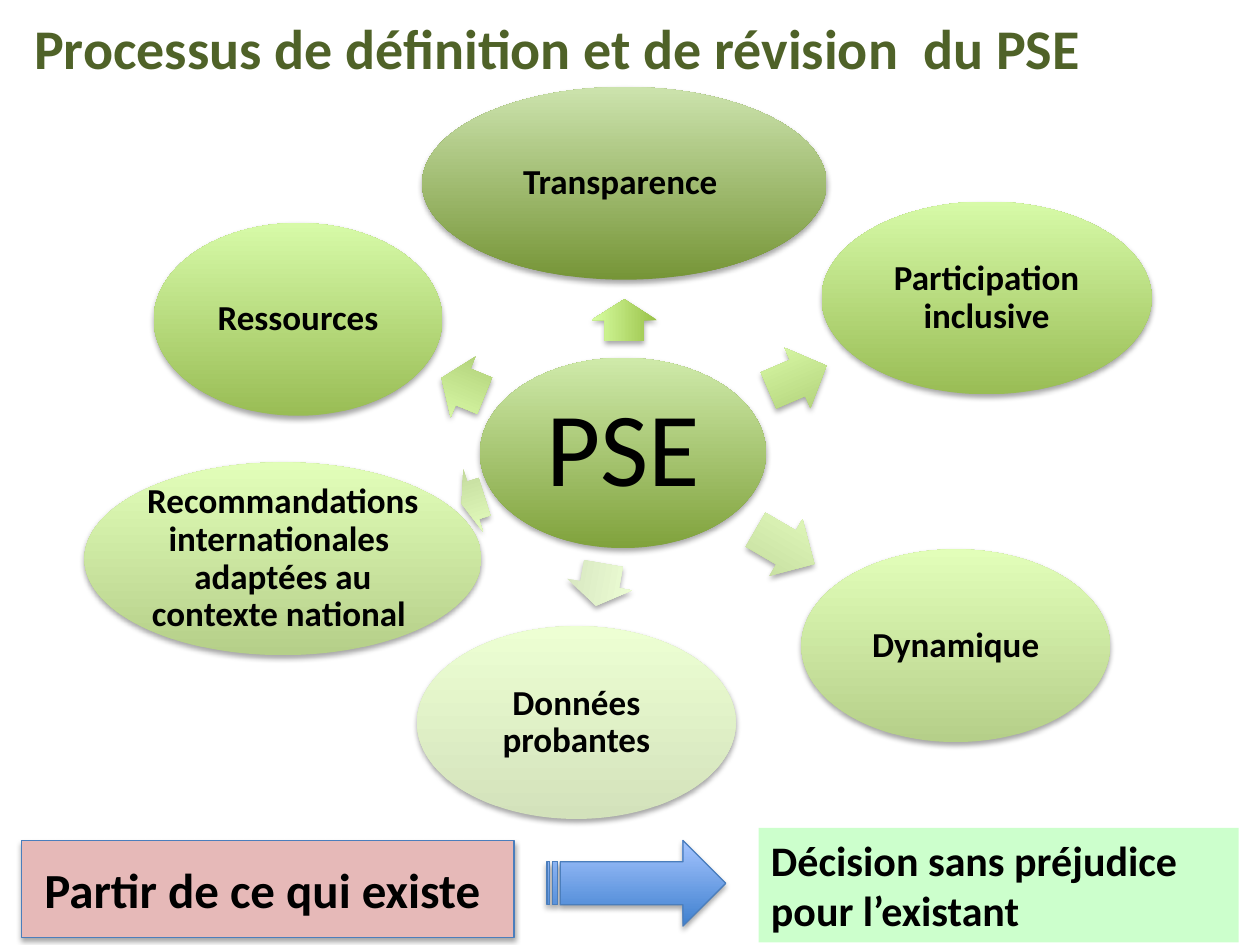
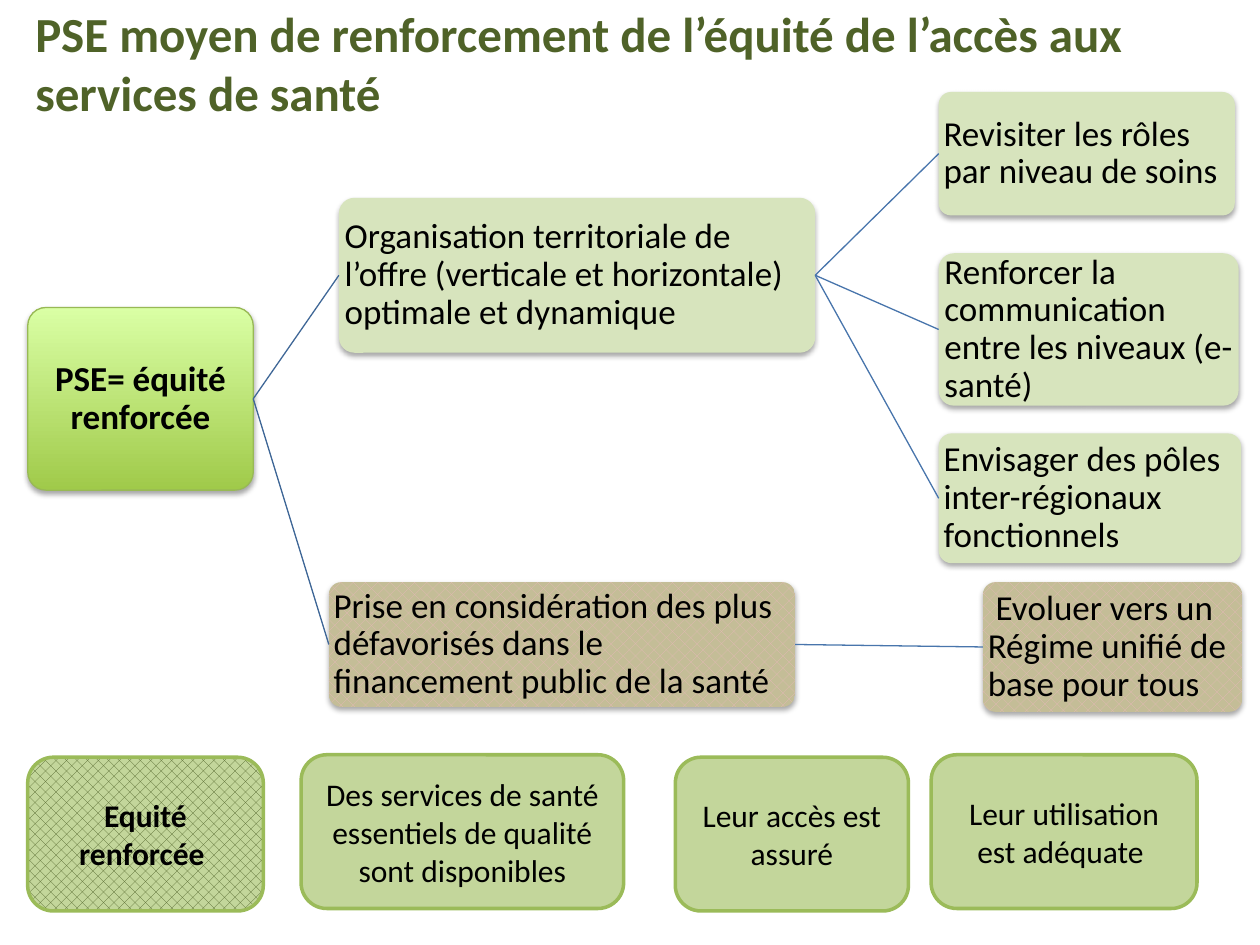
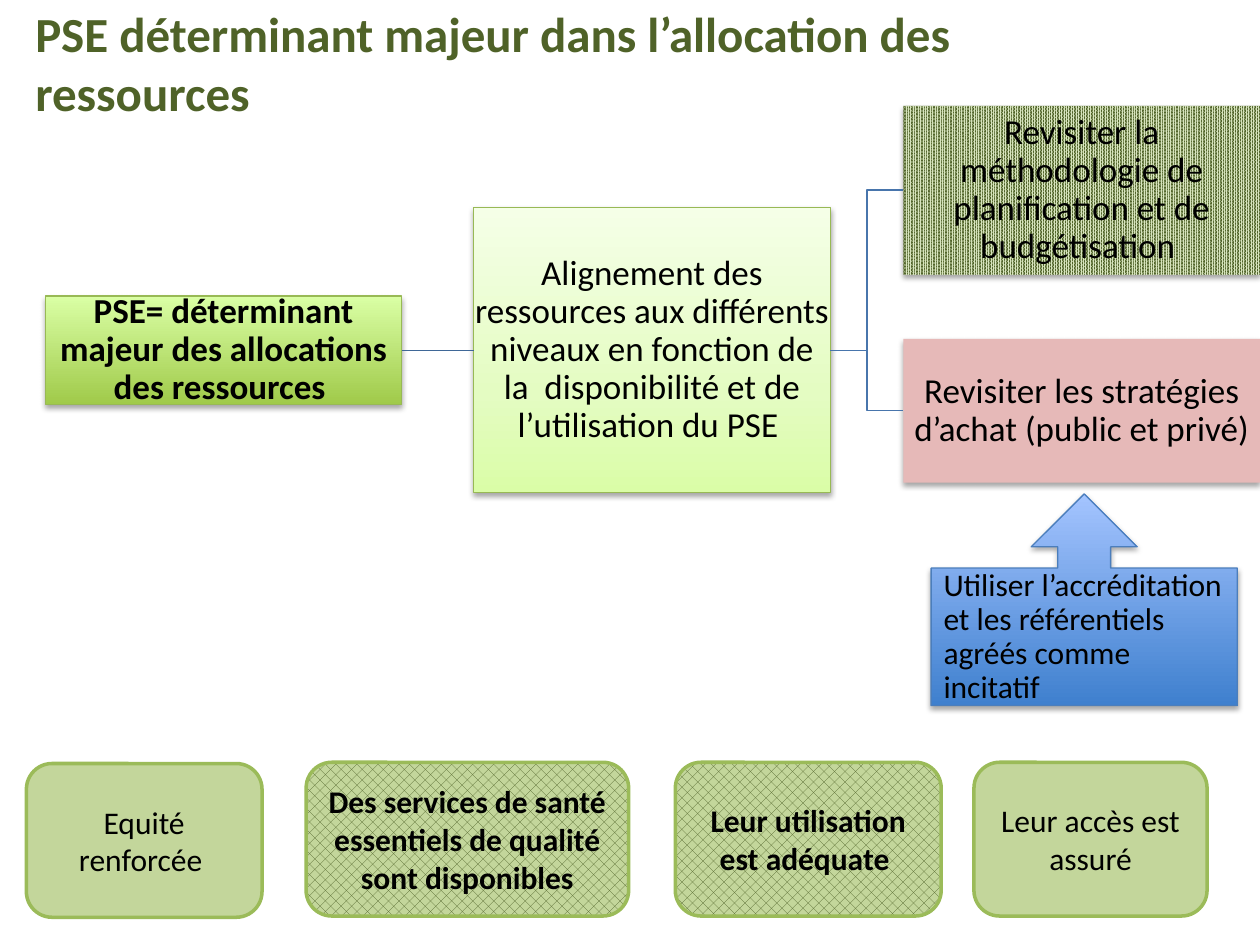
import copy
from dataclasses import dataclass, replace
from typing import Optional, Union

import pptx
import pptx.dml.color
import pptx.enum.dml
import pptx.enum.shapes
import pptx.enum.text
import pptx.oxml
import pptx.oxml.ns
import pptx.util
from lxml import etree

PX = 9144  # 100 px to the inch
FONT = "Calibri"
DARK_GREEN, PALE_GREEN, SOFT_GREEN, LEAF = "4F6228", "D7E4BD", "C3D69B", "9BBB59"
PINK, MINT, SAND, BLACK = "E6B9B8", "CCFFCC", "C4BD97", "000000"
BLUE_EDGE, GREEN_EDGE = "4B7EBC", "98B955"
TRUNK_LINE, BRANCH_LINE = "3F6797", "4875AC"

Kind = pptx.enum.shapes.MSO_SHAPE
Link = pptx.enum.shapes.MSO_CONNECTOR
Pattern = pptx.enum.dml.MSO_PATTERN
Align = pptx.enum.text.PP_ALIGN
Anchor = pptx.enum.text.MSO_ANCHOR


@dataclass(frozen=True)
class Gradient:
    """Colours from bottom to top, with an optional one at 35 %."""
    bottom: str
    top: str
    middle: Optional[str] = None


@dataclass(frozen=True)
class Hatch:
    pattern: Pattern
    front: str
    back: str


@dataclass(frozen=True)
class Look:
    fill: Union[str, Gradient, Hatch]
    line: Optional[str] = None
    line_width: float = 0.75
    shadow: bool = True


@dataclass(frozen=True)
class Style:
    size: int = 20
    bold: bool = False
    align: Align = Align.CENTER
    spacing: Optional[float] = 0.9
    inset: Optional[int] = 1
    anchor: Anchor = Anchor.MIDDLE


@dataclass(frozen=True)
class Frame:
    left: int
    top: int
    width: int
    height: int


@dataclass(frozen=True)
class Spoke:
    """A quality around the hub and the arrow that leads to it."""
    label: str
    oval: Frame
    oval_fill: Gradient
    arrow: Frame
    angle: float
    arrow_fill: Gradient


@dataclass(frozen=True)
class Criterion:
    label: str
    width: int


BLUE = Look(Gradient("3F80CE", "A4C4FF"), BLUE_EDGE)
ROOT = Look(Gradient("A0CA4A", "DAFFA5"), GREEN_EDGE)
OFFER = Look(PALE_GREEN)
FUNDING = Look(Hatch(Pattern.from_xml("pct30"), PINK, SAND))
PLAIN_CRITERION = Look(SOFT_GREEN, LEAF, 2, shadow=False)
KEY_CRITERION = replace(PLAIN_CRITERION,
                        fill=Hatch(Pattern.from_xml("pct40"), DARK_GREEN, SOFT_GREEN))

NODE = Style()
BOLD_NODE = Style(bold=True)
LEFT_NODE = Style(align=Align.LEFT)
BANNER = Style(28, True, spacing=None, inset=None)

EQUITY = Criterion("Equité renforcée ", 187)
SERVICES = Criterion("Des services de santé essentiels de qualité sont disponibles", 256)
USE = Criterion("Leur utilisation est adéquate ", 211)
ACCESS = Criterion("Leur accès est assuré", 185)

MEDIUM_OVAL, MEDIUM_ARROW = Gradient("99BD55", "D7FAA8"), Gradient("ABCB71", "DFFFAF")
LIGHT_OVAL, LIGHT_ARROW = Gradient("B5CF89", "E2FEB9"), Gradient("C0D799", "E6FFC1")

SPOKES = [
    Spoke("Transparence ", Frame(335, 69, 321, 153), Gradient("769537", "CCE3AD"),
          Frame(479, 228, 33, 52), 270, Gradient("99C147", "D8FEA2")),
    Spoke("Participation inclusive", Frame(652, 160, 262, 153), MEDIUM_OVAL,
          Frame(608, 274, 50, 52), 336.9, MEDIUM_ARROW),
    Spoke("Dynamique", Frame(636, 436, 245, 153), LIGHT_OVAL,
          Frame(596, 408, 54, 52), 30.2, LIGHT_ARROW),
    Spoke("Données probantes", Frame(331, 497, 253, 153), Gradient("D3E2BB", "EDFFD3"),
          Frame(459, 438, 34, 52), 100.1, Gradient("D6E5C0", "EEFFD5")),
    Spoke("Recommandations internationales  adaptées au contexte national ",
          Frame(67, 367, 315, 153), LIGHT_OVAL,
          Frame(366, 371, 19, 52), 162.6, LIGHT_ARROW),
    Spoke("Ressources", Frame(122, 177, 229, 153), MEDIUM_OVAL,
          Frame(349, 281, 37, 52), 202.3, MEDIUM_ARROW),
]


def rgb(value: str) -> pptx.dml.color.RGBColor:
    return pptx.dml.color.RGBColor.from_string(value)


def px(value: int) -> pptx.util.Emu:
    return pptx.util.Emu(value * PX)


def place(frame: Frame) -> tuple:
    return px(frame.left), px(frame.top), px(frame.width), px(frame.height)


def paint(shape, fill) -> None:
    if isinstance(fill, Gradient):
        shape.fill.gradient()
        shape.fill.gradient_angle = 90
        first, last = shape.fill.gradient_stops
        first.color.rgb, last.color.rgb = rgb(fill.bottom), rgb(fill.top)
        first.position, last.position = 0, 1
        if fill.middle:
            stop_list = shape._element.spPr.find(".//" + pptx.oxml.ns.qn("a:gsLst"))
            stop_list.insert(1, copy.deepcopy(stop_list[0]))
            middle = shape.fill.gradient_stops[1]
            middle.color.rgb, middle.position = rgb(fill.middle), 0.35
    elif isinstance(fill, Hatch):
        shape.fill.patterned()
        shape.fill.pattern = fill.pattern
        shape.fill.fore_color.rgb = rgb(fill.front)
        shape.fill.back_color.rgb = rgb(fill.back)
    else:
        shape.fill.solid()
        shape.fill.fore_color.rgb = rgb(fill)


def cast_shadow(shape) -> None:
    effects = shape._element.spPr.find(pptx.oxml.ns.qn("a:effectLst"))
    effects.append(pptx.oxml.parse_xml(
        f'<a:outerShdw {pptx.oxml.ns.nsdecls("a")} blurRad="40000" dist="23000"'
        ' dir="5400000" rotWithShape="0"><a:srgbClr val="000000">'
        '<a:alpha val="35000"/></a:srgbClr></a:outerShdw>'))


def write(shape, text: str, style: Style, color: str = BLACK) -> None:
    box = shape.text_frame
    box.word_wrap = True
    box.auto_size = pptx.enum.text.MSO_AUTO_SIZE.NONE
    box.vertical_anchor = style.anchor
    if style.inset is not None:
        box.margin_left = box.margin_right = px(style.inset)
        box.margin_top = box.margin_bottom = px(style.inset)
    box.text = text
    para = box.paragraphs[0]
    para.alignment = style.align
    if style.spacing:
        para.line_spacing = style.spacing
    para.font.name, para.font.size = FONT, pptx.util.Pt(style.size)
    para.font.bold, para.font.color.rgb = style.bold, rgb(color)


def add_shape(page, kind: Kind, frame: Frame, look: Look, text: str = "",
              style: Style = NODE, adjustments: tuple = ()):
    shape = page.shapes.add_shape(kind, *place(frame))
    for index, value in enumerate(adjustments):
        shape.adjustments[index] = value
    shape.shadow.inherit = False
    if look.shadow:
        cast_shadow(shape)
    paint(shape, look.fill)
    if look.line:
        shape.line.color.rgb = rgb(look.line)
        shape.line.width = pptx.util.Pt(look.line_width)
    else:
        shape.line.fill.background()
    if text:
        write(shape, text, style)
    return shape


def join(page, parent, child, color: str, kind: Link = Link.STRAIGHT) -> None:
    """Link the right side of parent to the left side of child."""
    line = page.shapes.add_connector(kind, 0, 0, 0, 0)
    line.begin_connect(parent, 3)
    line.end_connect(child, 1)
    line.line.color.rgb = rgb(color)
    line.line.width = pptx.util.Pt(0.75)
    etree.SubElement(line._element.spPr, pptx.oxml.ns.qn("a:effectLst"))


def add_page(deck, title: str, size: int = 28, left: int = 18, top: int = -13):
    page = deck.slides.add_slide(deck.slide_layouts[5])
    heading = page.shapes.title
    heading.left, heading.top, heading.width, heading.height = place(
        Frame(left, top, 900, 125))
    write(heading, title, Style(size, True, Align.LEFT, None, None), DARK_GREEN)
    return page


def add_criterion(page, criterion: Criterion, left: int, top: int, key: bool = False) -> None:
    add_shape(page, Kind.ROUNDED_RECTANGLE, Frame(left, top, criterion.width, 122),
              KEY_CRITERION if key else PLAIN_CRITERION, criterion.label,
              Style(18, key, spacing=None, inset=None))


def build_process(deck) -> None:
    page = add_page(deck, "Processus de définition et de révision  du PSE", 32, 17, -25)
    add_shape(page, Kind.OVAL, Frame(381, 284, 227, 151),
              Look(Gradient("80A23C", "CFEAAA")), "PSE", Style(60, inset=8))
    for spoke in SPOKES:
        arrow = add_shape(page, Kind.RIGHT_ARROW, spoke.arrow, Look(spoke.arrow_fill),
                          adjustments=(0.6, 0.5))
        arrow.rotation = spoke.angle
        add_shape(page, Kind.OVAL, spoke.oval, Look(spoke.oval_fill), spoke.label,
                  Style(bold=True, inset=3))
    add_shape(page, Kind.RECTANGLE, Frame(17, 667, 391, 77), Look(PINK, BLUE_EDGE),
              "Partir de ce qui existe ", BANNER)
    add_shape(page, Kind.RECTANGLE, Frame(602, 657, 381, 91), Look(MINT, shadow=False),
              "Décision sans préjudice pour l’existant",
              replace(BANNER, size=24, align=Align.LEFT, anchor=Anchor.TOP))
    add_shape(page, Kind.STRIPED_RIGHT_ARROW, Frame(434, 667, 142, 68), BLUE)


def build_equity(deck) -> None:
    page = add_page(
        deck, "PSE moyen de renforcement de l’équité de l’accès aux services de santé")

    def node(text: str, frame: Frame, look: Look, style: Style = LEFT_NODE):
        return add_shape(page, Kind.ROUNDED_RECTANGLE, frame, look, text, style, (0.1,))

    root = node("PSE= équité renforcée", Frame(22, 244, 179, 145), ROOT, BOLD_NODE)
    offer = node("Organisation territoriale de l’offre (verticale et horizontale) "
                 "optimale et dynamique", Frame(269, 157, 378, 123), OFFER)
    funding = node("Prise en considération des plus défavorisés dans le financement "
                   "public de la santé", Frame(261, 462, 370, 99), FUNDING)
    for branch in (offer, funding):
        join(page, root, branch, TRUNK_LINE)
    for parent, look, text, frame in [
        (offer, OFFER, "Revisiter les rôles par niveau de soins",
         Frame(745, 73, 235, 98)),
        (offer, OFFER, "Renforcer la communication entre les niveaux (e- santé)",
         Frame(745, 201, 238, 121)),
        (offer, OFFER, "Envisager des pôles  inter-régionaux fonctionnels",
         Frame(745, 344, 240, 103)),
        (funding, FUNDING, " Evoluer vers un Régime unifié de base pour tous",
         Frame(780, 462, 206, 103)),
    ]:
        join(page, parent, node(text, frame, look), BRANCH_LINE)

    add_criterion(page, EQUITY, 22, 601, key=True)
    add_criterion(page, SERVICES, 239, 599)
    add_criterion(page, ACCESS, 536, 601)
    add_criterion(page, USE, 739, 599)


def build_allocation(deck) -> None:
    page = add_page(deck, "PSE déterminant majeur dans l’allocation des ressources")

    def node(text: str, left: int, top: int, height: int, look: Look, style: Style = NODE):
        return add_shape(page, Kind.RECTANGLE, Frame(left, top, 283, height),
                         look, text, style)

    root = node("PSE= déterminant majeur des allocations des ressources ",
                36, 235, 86, ROOT, BOLD_NODE)
    alignment = node("Alignement des ressources aux différents niveaux en fonction de la  "
                     "disponibilité et de l’utilisation du PSE ", 376, 165, 226,
                     Look(Gradient("DAFDA7", "F5FFE7", "E4FCC2"), GREEN_EDGE))
    planning = node("Revisiter la méthodologie de planification et de budgétisation ",
                    717, 84, 134,
                    Look(Hatch(Pattern.from_xml("pct90"), PALE_GREEN, DARK_GREEN)))
    purchasing = node("Revisiter les stratégies d’achat (public et privé)",
                      717, 269, 114, Look(PINK))
    join(page, root, alignment, TRUNK_LINE)
    for leaf in (planning, purchasing):
        join(page, alignment, leaf, BRANCH_LINE, Link.ELBOW)
    add_shape(page, Kind.UP_ARROW_CALLOUT, Frame(739, 392, 243, 168), BLUE,
              "Utiliser l’accréditation et les référentiels agréés comme incitatif",
              Style(18, align=Align.LEFT, inset=None))

    add_criterion(page, EQUITY, 21, 606)
    add_criterion(page, SERVICES, 243, 605, key=True)
    add_criterion(page, USE, 536, 605, key=True)
    add_criterion(page, ACCESS, 773, 605)


def main() -> None:
    deck = pptx.Presentation()
    deck.slide_width, deck.slide_height = px(1000), px(750)
    build_process(deck)
    build_equity(deck)
    build_allocation(deck)
    deck.save("out.pptx")


if __name__ == "__main__":
    main()
